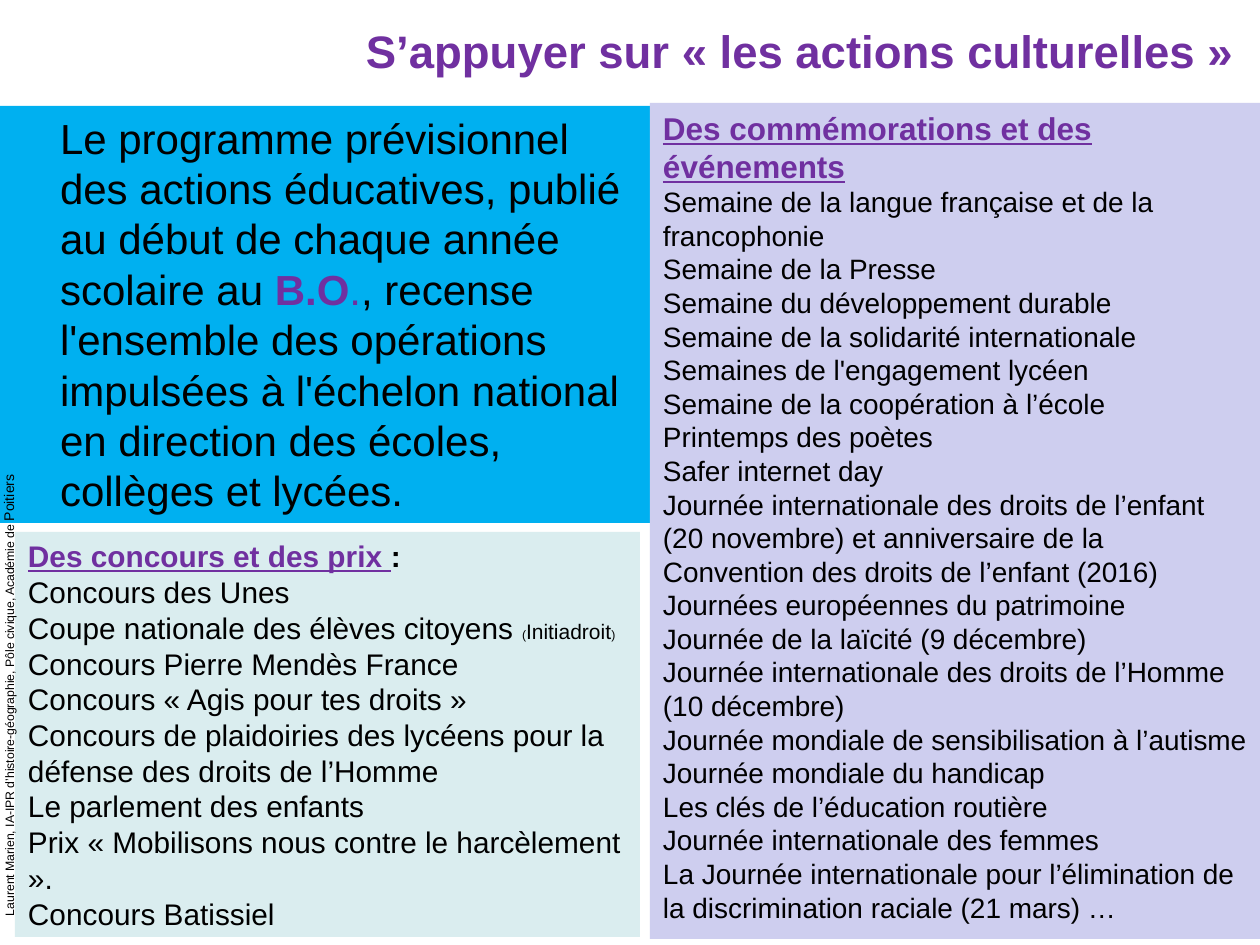
from dataclasses import dataclass

from pptx import Presentation
from pptx.dml.color import RGBColor
from pptx.enum.shapes import MSO_SHAPE
from pptx.enum.text import MSO_ANCHOR, PP_ALIGN
from pptx.util import Emu, Pt

RECTANGLE = MSO_SHAPE.RECTANGLE
TOP, MIDDLE = MSO_ANCHOR.TOP, MSO_ANCHOR.MIDDLE
LEFT, RIGHT = PP_ALIGN.LEFT, PP_ALIGN.RIGHT
EMU_PER_PX = 914400 / 126
BLANK_LAYOUT = 6


@dataclass(frozen=True)
class Theme:
    font: str = "Arial"
    ink: str = "000000"
    accent: str = "7030A0"
    programme_fill: str = "00B0F0"
    events_fill: str = "CECEEF"
    contests_fill: str = "DAEDEF"
    title: int = 26
    programme: int = 24
    events_heading: int = 18
    events: int = 16
    contests: int = 17
    aside: int = 12
    parenthesis: int = 7
    credit: int = 7
    credit_end: int = 8


THEME = Theme()


@dataclass(frozen=True)
class Run:
    text: str
    size: int
    color: str = THEME.ink
    bold: bool = False
    underline: bool = False


@dataclass(frozen=True)
class Panel:
    left: int
    top: int
    width: int
    height: int
    paragraphs: list[list[Run]]
    fill: str | None = None
    align: PP_ALIGN = LEFT
    anchor: MSO_ANCHOR = TOP
    rotation: int = 0
    text_inset: int = 13


def px(length: int) -> Emu:
    return Emu(round(length * EMU_PER_PX))


def lines(texts: list[str], size: int) -> list[list[Run]]:
    return [[Run(text, size)] for text in texts]


def add_run(paragraph, run: Run) -> None:
    text_run = paragraph.add_run()
    text_run.text = run.text
    formats = {
        "name": THEME.font,
        "size": Pt(run.size),
        "bold": run.bold,
        "underline": run.underline,
    }
    for name, value in formats.items():
        setattr(text_run.font, name, value)
    text_run.font.color.rgb = RGBColor.from_string(run.color)


def add_panel(slide, panel: Panel) -> None:
    bounds = [px(n) for n in (panel.left, panel.top, panel.width, panel.height)]
    if panel.fill:
        shape = slide.shapes.add_shape(RECTANGLE, *bounds)
        shape.shadow.inherit = False
        shape.fill.solid()
        shape.fill.fore_color.rgb = RGBColor.from_string(panel.fill)
        shape.line.fill.background()
    else:
        shape = slide.shapes.add_textbox(*bounds)
    shape.rotation = panel.rotation
    frame = shape.text_frame
    formats = {
        "word_wrap": True,
        "vertical_anchor": panel.anchor,
        "margin_left": px(panel.text_inset),
    }
    for name, value in formats.items():
        setattr(frame, name, value)
    for index, runs in enumerate(panel.paragraphs):
        paragraph = frame.add_paragraph() if index else frame.paragraphs[0]
        paragraph.alignment = panel.align
        for run in runs:
            add_run(paragraph, run)


TITLE = [[Run("S’appuyer sur « les actions culturelles »", THEME.title, THEME.accent, True)]]

PROGRAMME = [[
    Run("Le programme prévisionnel des actions éducatives, publié au début de "
        "chaque année scolaire au ", THEME.programme),
    Run("B.O", THEME.programme, THEME.accent, True),
    Run(".", THEME.programme, THEME.accent),
    Run(", recense l'ensemble des opérations impulsées à l'échelon national "
        "en direction des écoles, collèges et lycées.", THEME.programme),
]]

EVENTS = [
    [Run("Des commémorations et des événements", THEME.events_heading, THEME.accent, True, True)],
    *lines([
        "Semaine de la langue française et de la francophonie",
        "Semaine de la Presse",
        "Semaine du développement durable",
        "Semaine de la solidarité internationale",
        "Semaines de l'engagement lycéen",
        "Semaine de la coopération à l’école",
        "Printemps des poètes",
        "Safer internet day",
        "Journée internationale des droits de l’enfant (20 novembre) et "
        "anniversaire de la Convention des droits de l’enfant (2016)",
        "Journées européennes du patrimoine",
        "Journée de la laïcité (9 décembre)",
        "Journée internationale des droits de l’Homme (10 décembre)",
        "Journée mondiale de sensibilisation à l’autisme",
        "Journée mondiale du handicap",
        "Les clés de l’éducation routière",
        "Journée internationale des femmes",
        "La Journée internationale pour l’élimination de la discrimination "
        "raciale (21 mars) …",
    ], THEME.events),
]

CONTESTS = [
    [Run("Des concours et des prix ", THEME.contests, THEME.accent, True, True),
     Run(":", THEME.contests, bold=True)],
    *lines(["Concours des Unes"], THEME.contests),
    [Run("Coupe nationale des élèves citoyens ", THEME.contests),
     Run("(", THEME.parenthesis),
     Run("Initiadroit", THEME.aside),
     Run(")", THEME.parenthesis)],
    *lines([
        "Concours Pierre Mendès France",
        "Concours « Agis pour tes droits »",
        "Concours de plaidoiries des lycéens pour la défense des droits de l’Homme",
        "Le parlement des enfants",
        "Prix « Mobilisons nous contre le harcèlement ».",
        "Concours Batissiel",
    ], THEME.contests),
]

CREDIT = [[
    Run("Laurent Marien, IA-IPR d’histoire-géographie, Pôle civique, Académie de ", THEME.credit),
    Run("Poitiers", THEME.credit_end),
]]

PANELS = [
    Panel(113, 26, 1134, 49, TITLE, align=RIGHT, anchor=MIDDLE),
    Panel(0, 106, 650, 417, PROGRAMME, THEME.programme_fill, text_inset=60),
    Panel(650, 103, 610, 836, EVENTS, THEME.events_fill),
    Panel(15, 532, 625, 405, CONTESTS, THEME.contests_fill),
    Panel(-338, 567, 694, 30, CREDIT, rotation=270),
]


def main() -> None:
    presentation = Presentation()
    presentation.slide_width, presentation.slide_height = px(1260), px(945)
    slide = presentation.slides.add_slide(presentation.slide_layouts[BLANK_LAYOUT])
    for panel in PANELS:
        add_panel(slide, panel)
    presentation.save("out.pptx")


if __name__ == "__main__":
    main()
